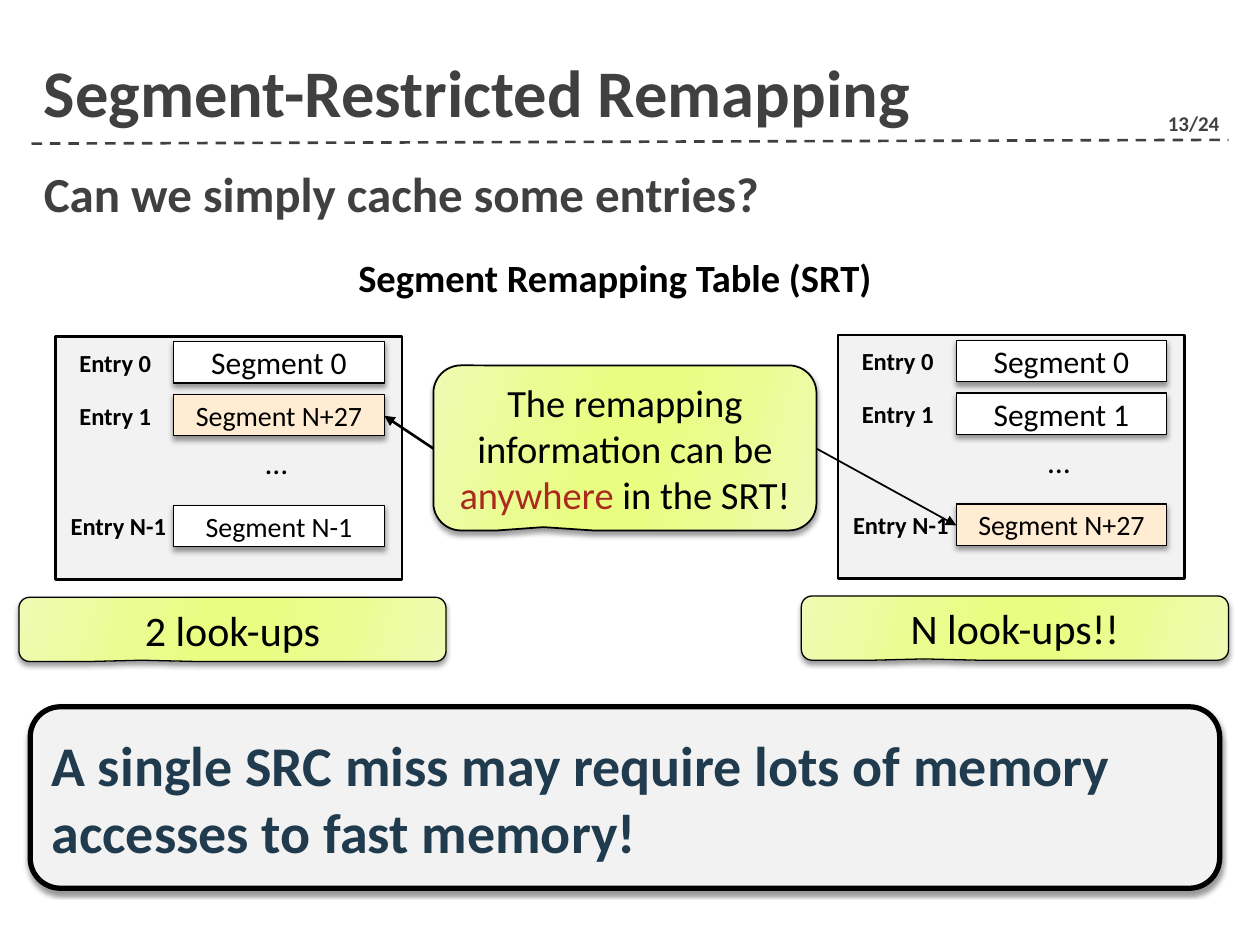
from lxml.etree import SubElement
from pptx import Presentation
from pptx.dml.color import RGBColor
from pptx.enum.dml import MSO_LINE
from pptx.enum.shapes import MSO_CONNECTOR, MSO_SHAPE as Shape
from pptx.enum.text import MSO_ANCHOR as Anchor, PP_ALIGN as Align
from pptx.oxml import parse_xml
from pptx.oxml.ns import nsdecls, qn
from pptx.util import Inches, Pt

BLACK = RGBColor(0x00, 0x00, 0x00)
WHITE = RGBColor(0xFF, 0xFF, 0xFF)
GRAY = RGBColor(0x40, 0x40, 0x40)
PANEL = RGBColor(0xF2, 0xF2, 0xF2)
PEACH = RGBColor(0xFF, 0xEC, 0xD3)
RED = RGBColor(0xAA, 0x2B, 0x1E)
NAVY = RGBColor(0x20, 0x3A, 0x4E)
LIME_STOPS = [(0, "EFFBB3"), (30, "EAFC8F"), (45, "E9FD81"),
              (55, "E9FD81"), (73, "EAFC8F"), (100, "EFFBB3")]

# Content
TITLE = "Segment-Restricted Remapping"
PAGE_NUMBER = "13/24"
QUESTION = "Can we simply cache some entries?"
TABLE_NAME = "Segment Remapping Table (SRT)"
REMARK = [("The remapping information can be ", BLACK),
          ("anywhere ", RED), ("in the SRT!", BLACK)]
CONCLUSION = "A single SRC miss may require lots of memory accesses to fast memory!"
ENTRIES = [("Entry 0", 0.04, 0.95), ("Entry 1", 0.46, 0.95), ("Entry N-1", 1.34, 1)]
# Left, top, (segment, size, fill) for each entry, look-up cost
TABLES = [
    (0.44, 2.67, [("Segment 0", 18, WHITE), ("Segment N+27", 16, PEACH),
                  ("Segment N-1", 16, WHITE)], "2 look-ups"),
    (6.65, 2.66, [("Segment 0", 18, WHITE), ("Segment 1", 18, WHITE),
                  ("Segment N+27", 16, PEACH)], "N look-ups!!"),
]

deck = Presentation()
deck.slide_width, deck.slide_height = Inches(10), Inches(7.5)
page = deck.slides.add_slide(deck.slide_layouts[6])


def write(box, spans, size, color=BLACK, bold=False, align=Align.CENTER,
          anchor=Anchor.MIDDLE):
    frame = box.text_frame
    frame.word_wrap = True
    frame.vertical_anchor = anchor
    para = frame.paragraphs[0]
    para.alignment = align
    para.font.name, para.font.size, para.font.bold = "Calibri", Pt(size), bold
    para.font.color.rgb = color
    if isinstance(spans, str):
        spans = [(spans, color)]
    for words, span_color in spans:
        span = para.add_run()
        span.text = words
        span.font.color.rgb = span_color
    return para


def add_text(words, left, top, width, height, size, color=BLACK, bold=True,
             align=Align.CENTER, anchor=Anchor.TOP):
    box = page.shapes.add_textbox(*map(Inches, (left, top, width, height)))
    return write(box, words, size, color, bold, align, anchor)


def add_box(kind, left, top, width, height, fill, line, shadow=True):
    box = page.shapes.add_shape(kind, *map(Inches, (left, top, width, height)))
    box.shadow.inherit = False
    box.fill.solid()
    box.fill.fore_color.rgb = fill
    box.line.color.rgb = BLACK
    box.line.width = Pt(line)
    if shadow:
        effects = box._element.spPr.find(qn("a:effectLst"))
        effects.append(parse_xml(
            f'<a:outerShdw {nsdecls("a")} blurRad="{Pt(3)}" dist="{Pt(2)}" '
            'dir="5400000" rotWithShape="0"><a:srgbClr val="000000">'
            '<a:alpha val="40000"/></a:srgbClr></a:outerShdw>'))
    return box


def add_callout(spans, left, top, width, height, size, line):
    box = add_box(Shape.ROUNDED_RECTANGULAR_CALLOUT, left, top, width, height,
                  WHITE, line)
    for index, value in enumerate((-0.213, 0.48, 0.167)):
        box.adjustments[index] = value
    box.fill.gradient()
    box.fill.gradient_angle = -16 % 360
    stops = box._element.spPr.find(qn("a:gradFill")).find(qn("a:gsLst"))
    for stop in list(stops):
        stops.remove(stop)
    for percent, color in LIME_STOPS:
        stop = SubElement(stops, qn("a:gs"), pos=str(percent * 1000))
        SubElement(stop, qn("a:srgbClr"), val=color)
    write(box, spans, size)


def add_line(start, end, color, width, arrow=False):
    line = page.shapes.add_connector(MSO_CONNECTOR.STRAIGHT,
                                     *map(Inches, (*start, *end)))
    line.line.color.rgb = color
    line.line.width = Pt(width)
    if arrow:
        SubElement(line.line._get_or_add_ln(), qn("a:tailEnd"), type="triangle")
    SubElement(line._element.spPr, qn("a:effectLst"))
    return line


# Heading
add_text(PAGE_NUMBER, 9.17, 0.83, 0.67, 0.25, 12, GRAY, align=Align.LEFT)
add_line((0.25, 1.14), (9.75, 1.11), GRAY, 1.5).line.dash_style = MSO_LINE.DASH
add_text(TITLE, 0.25, 0.17, 9.25, 0.92, 38, GRAY, align=Align.LEFT,
         anchor=Anchor.BOTTOM)
question = add_text(QUESTION, 0.25, 1.25, 9.5, 0.7, 28, GRAY, align=Align.LEFT)
question.space_before = Pt(6)
add_text(TABLE_NAME, 2.48, 1.97, 4.8, 0.47, 22)

# Remapping tables, each with its look-up cost below
for left, top, segments, cost in TABLES:
    add_box(Shape.RECTANGLE, left, top, 2.75, 1.93, PANEL, 1.5, shadow=False)
    for (entry, offset, width), (segment, size, fill) in zip(ENTRIES, segments):
        cell = add_box(Shape.RECTANGLE, left + 0.94, top + offset, 1.67, 0.33,
                       fill, 0.75)
        write(cell, segment, size)
        add_text(entry, left, top + offset, width, 0.34, 14)
    add_text("…", left + 0.92, top + 0.8, 1.67, 0.4, 18, bold=False)
    add_callout(cost, left - 0.29, top + 2.07, 3.39, 0.51, 24, 0.75)

# Remark pointing at the remapped entries
add_callout(REMARK, 3.44, 2.9, 3.04, 1.31, 22, 1)
add_line((3.44, 3.56), (3.05, 3.3), BLACK, 1.5, arrow=True)
add_line((6.48, 3.56), (7.59, 4.17), BLACK, 1, arrow=True)

# Conclusion
conclusion = add_box(Shape.ROUNDED_RECTANGLE, 0.24, 5.61, 9.44, 1.44, PANEL, 3)
write(conclusion, CONCLUSION, 32, NAVY, bold=True, align=Align.LEFT)

deck.save("out.pptx")
